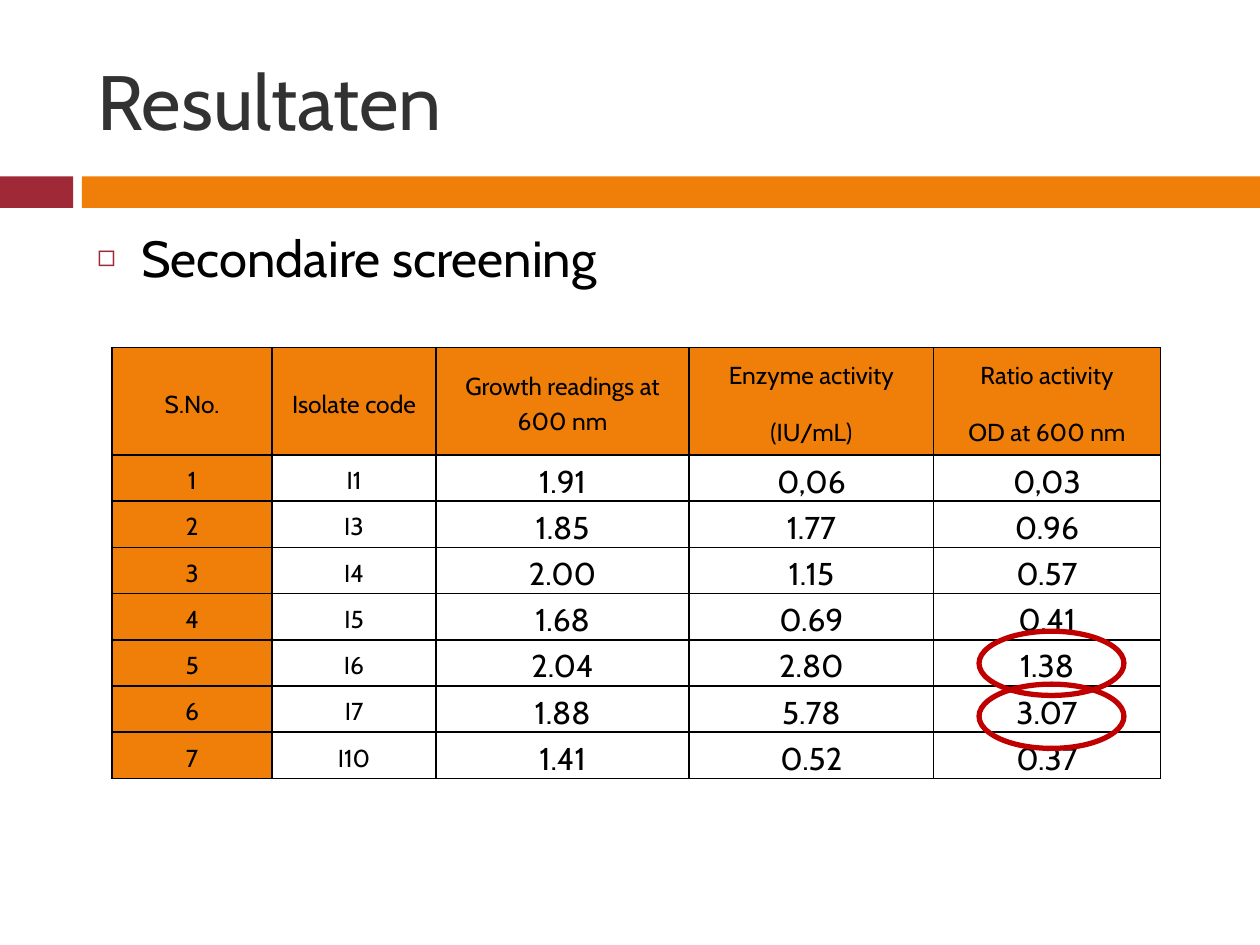
from typing import NamedTuple

from lxml.etree import SubElement
from pptx import Presentation
from pptx.dml.color import RGBColor
from pptx.enum.shapes import MSO_SHAPE as Shape
from pptx.enum.text import MSO_ANCHOR as Anchor, MSO_AUTO_SIZE as AutoSize, PP_ALIGN as Align
from pptx.oxml.ns import qn
from pptx.util import Inches, Pt

FONT = "Cabin"
ORANGE = RGBColor(0xF0, 0x7F, 0x09)
CRIMSON = RGBColor(0x9F, 0x29, 0x36)
RED = RGBColor(0xC0, 0x00, 0x00)
GREY = RGBColor(0x32, 0x32, 0x32)
BLACK = RGBColor(0x00, 0x00, 0x00)

COLUMN_WIDTHS = (1.27, 1.3, 2.01, 1.94, 1.8)
TABLE_HEIGHT, HEADER_HEIGHT = 3.42, 0.85
HEADERS = ("S.No.", "Isolate code", "Growth readings at 600 nm",
           "Enzyme activity\n(IU/mL)", "Ratio activity\nOD at 600 nm")


class Box(NamedTuple):
    left: float
    top: float
    width: float
    height: float


class Bar(NamedTuple):
    box: Box
    color: RGBColor


class Isolate(NamedTuple):
    number: str
    code: str
    growth: str
    activity: str
    ratio: str


BARS = (Bar(Box(0, 1.4, 0.58, 0.25), CRIMSON), Bar(Box(0.65, 1.4, 9.35, 0.25), ORANGE))
HIGHLIGHTS = (Box(7.77, 5.01, 1.15, 0.51), Box(7.77, 5.43, 1.15, 0.51))
ISOLATES = (
    Isolate("1", "I1", "1.91", "0,06", "0,03"),
    Isolate("2", "I3", "1.85", "1.77", "0.96"),
    Isolate("3", "I4", "2.00", "1.15", "0.57"),
    Isolate("4", "I5", "1.68", "0.69", "0.41"),
    Isolate("5", "I6", "2.04", "2.80", "1.38"),
    Isolate("6", "I7", "1.88", "5.78", "3.07"),
    Isolate("7", "I10", "1.41", "0.52", "0.37"),
)


def set_font(para, size: float, color: RGBColor) -> None:
    para.font.name = FONT
    para.font.size = Pt(size)
    para.font.color.rgb = color


def fill_placeholder(holder, box: Box, text: str, size: float, color: RGBColor):
    """Move a placeholder, set its text and return its paragraph."""
    holder.left, holder.top, holder.width, holder.height = map(Inches, box)
    frame = holder.text_frame
    frame.text = text
    frame.auto_size = AutoSize.NONE
    para = frame.paragraphs[0]
    para.alignment = Align.LEFT
    set_font(para, size, color)
    return para


def add_square_bullet(para) -> None:
    para.space_before = Pt(7)
    properties = para._p.get_or_add_pPr()
    properties.set("marL", str(Inches(0.35)))
    properties.set("indent", str(Inches(-0.35)))
    color = SubElement(properties, qn("a:buClr"))
    SubElement(color, qn("a:srgbClr"), val=str(CRIMSON))
    SubElement(properties, qn("a:buSzPct"), val="60000")
    SubElement(properties, qn("a:buChar"), char="◻")


def add_bar(page, bar: Bar) -> None:
    shape = page.shapes.add_shape(Shape.RECTANGLE, *map(Inches, bar.box))
    shape.shadow.inherit = False
    shape.fill.solid()
    shape.fill.fore_color.rgb = bar.color
    shape.line.fill.background()


def add_highlight(page, box: Box) -> None:
    ellipse = page.shapes.add_shape(Shape.OVAL, *map(Inches, box))
    ellipse.shadow.inherit = False
    ellipse.fill.background()
    ellipse.line.color.rgb = RED
    ellipse.line.width = Pt(3)


def add_borders(cell) -> None:
    properties = cell._tc.get_or_add_tcPr()
    for side in ("lnL", "lnR", "lnT", "lnB"):
        line = SubElement(properties, qn(f"a:{side}"), w=str(Pt(1)))
        fill = SubElement(line, qn("a:solidFill"))
        SubElement(fill, qn("a:srgbClr"), val=str(BLACK))


def format_cell(cell, text: str, size: float, shaded: bool) -> None:
    add_borders(cell)
    if shaded:
        cell.fill.solid()
        cell.fill.fore_color.rgb = ORANGE
    else:
        cell.fill.background()
    cell.vertical_anchor = Anchor.MIDDLE
    cell.margin_left = cell.margin_right = Inches(0.07)
    cell.margin_top = cell.margin_bottom = 0
    cell.text_frame.text = text
    for para in cell.text_frame.paragraphs:
        para.alignment = Align.CENTER
        para.line_spacing = 1.2
        para.space_before = para.space_after = Pt(6)
        set_font(para, size, BLACK)


def add_results_table(page) -> None:
    rows = (HEADERS, *ISOLATES)
    box = Box(0.89, 2.76, sum(COLUMN_WIDTHS), TABLE_HEIGHT)
    table = page.shapes.add_table(len(rows), len(HEADERS), *map(Inches, box)).table
    for column, width in zip(table.columns, COLUMN_WIDTHS):
        column.width = Inches(width)
    row_height = (TABLE_HEIGHT - HEADER_HEIGHT) / len(ISOLATES)
    for r, values in enumerate(rows):
        table.rows[r].height = Inches(row_height if r else HEADER_HEIGHT)
        for c, text in enumerate(values):
            is_measurement = r > 0 and c > 1
            format_cell(table.cell(r, c), text, 18 if is_measurement else 14,
                        shaded=r == 0 or c == 0)


def main() -> None:
    deck = Presentation()
    deck.slide_width, deck.slide_height = Inches(10), Inches(7.5)
    page = deck.slides.add_slide(deck.slide_layouts[1])
    for bar in BARS:
        add_bar(page, bar)
    title, body = page.placeholders
    fill_placeholder(title, Box(0.67, 0.25, 8.92, 1.08), "Resultaten", 44, GREY)
    title.text_frame.vertical_anchor = Anchor.MIDDLE
    add_square_bullet(fill_placeholder(
        body, Box(0.67, 1.75, 8.92, 4.92), "Secondaire screening", 29, BLACK))
    add_results_table(page)
    for box in HIGHLIGHTS:
        add_highlight(page, box)
    deck.save("out.pptx")


if __name__ == "__main__":
    main()
